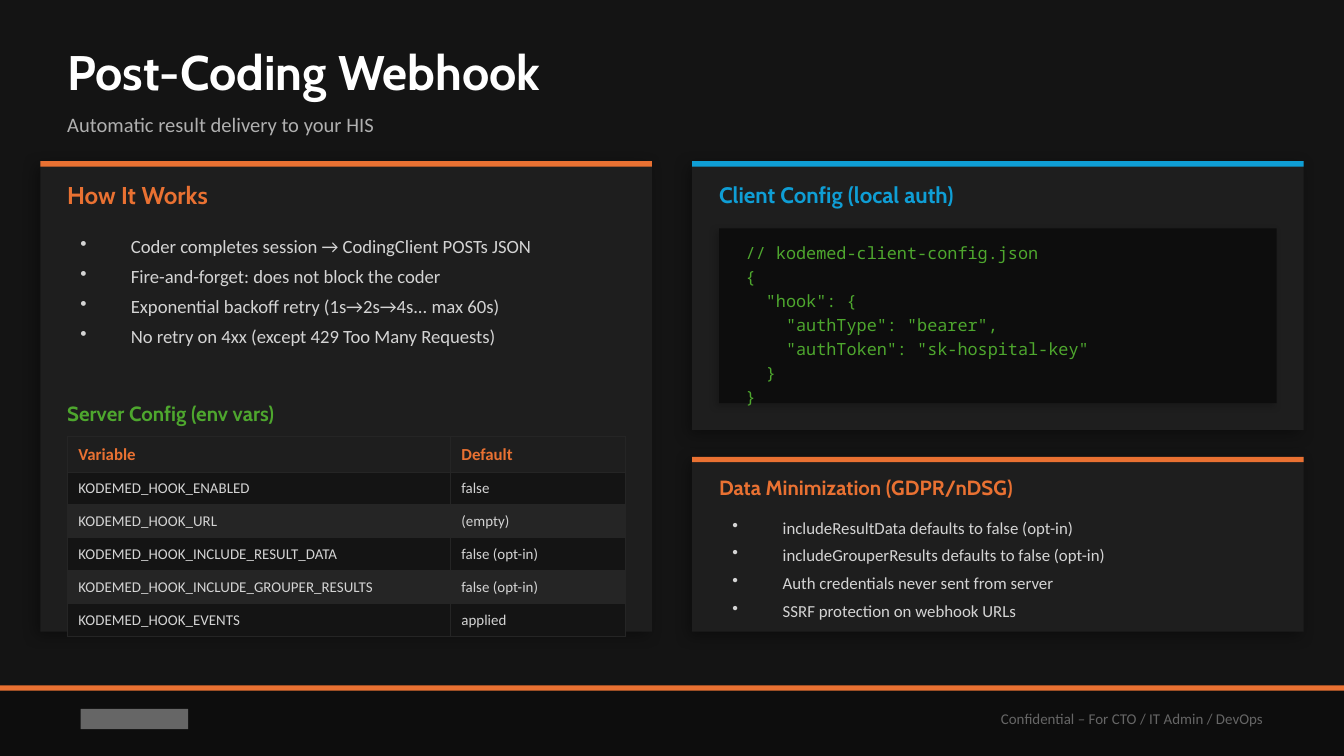
from dataclasses import dataclass

from lxml import etree
from pptx import Presentation
from pptx.dml.color import RGBColor
from pptx.enum.shapes import MSO_SHAPE
from pptx.enum.text import MSO_ANCHOR, PP_ALIGN
from pptx.oxml.ns import qn
from pptx.util import Inches, Pt

RECTANGLE = MSO_SHAPE.RECTANGLE
TOP, MIDDLE = MSO_ANCHOR.TOP, MSO_ANCHOR.MIDDLE
LEFT, RIGHT = PP_ALIGN.LEFT, PP_ALIGN.RIGHT

CELL = 0.05
COLUMNS, ROWS = 200, 112.5
LEFT_PANEL, RIGHT_PANEL, PANEL_COLUMNS = 6, 103, 91
PADDING = 4
INNER_COLUMNS = PANEL_COLUMNS - 2 * PADDING
BAR_ROWS = 0.8

HEADING, BODY, MONO = "Cabin", "Calibri", "Noto Sans Mono"
PAGE_COLOR, PANEL_COLOR, DEEP, STRIPE = "141414", "1E1E1E", "0D0D0D", "252525"
ORANGE, BLUE, GREEN = "E97132", "0F9ED5", "4EA72E"
WHITE, LIGHT, GRAY, DIM = "FFFFFF", "D4D4D4", "B0B0B0", "666666"


@dataclass(frozen=True)
class Area:
    column: float
    row: float
    columns: float
    rows: float

    def lengths(self) -> list[int]:
        return [grid(n) for n in (self.column, self.row, self.columns, self.rows)]


@dataclass(frozen=True)
class Style:
    size: float
    color: str
    font: str = BODY
    bold: bool = False


@dataclass(frozen=True)
class Shadow:
    opacity: int
    blur: float
    distance: float


@dataclass(frozen=True)
class Panel:
    column: float
    row: float
    rows: float
    accent: str
    title: str
    title_size: float
    title_rows: float


PANEL_SHADOW = Shadow(35, 8, 3)
CODE_SHADOW = Shadow(20, 4, 2)

PANELS = [
    Panel(LEFT_PANEL, 24, 70, ORANGE, "How It Works", 13, 6),
    Panel(RIGHT_PANEL, 24, 40, BLUE, "Client Config (local auth)", 12, 6),
    Panel(RIGHT_PANEL, 68, 26, ORANGE, "Data Minimization (GDPR/nDSG)", 11, 5),
]
STEPS = [
    "Coder completes session → CodingClient POSTs JSON",
    "Fire-and-forget: does not block the coder",
    "Exponential backoff retry (1s→2s→4s... max 60s)",
    "No retry on 4xx (except 429 Too Many Requests)",
]
SAFEGUARDS = [
    "includeResultData defaults to false (opt-in)",
    "includeGrouperResults defaults to false (opt-in)",
    "Auth credentials never sent from server",
    "SSRF protection on webhook URLs",
]
CODE = """// kodemed-client-config.json
{
  "hook": {
    "authType": "bearer",
    "authToken": "sk-hospital-key"
  }
}""".split("\n")
VARIABLES = [
    ("Variable", "Default"),
    ("KODEMED_HOOK_ENABLED", "false"),
    ("KODEMED_HOOK_URL", "(empty)"),
    ("KODEMED_HOOK_INCLUDE_RESULT_DATA", "false (opt-in)"),
    ("KODEMED_HOOK_INCLUDE_GROUPER_RESULTS", "false (opt-in)"),
    ("KODEMED_HOOK_EVENTS", "applied"),
]


def grid(cells: float) -> int:
    return Inches(cells * CELL)


def paint(target, color: str) -> None:
    target.solid()
    target.fore_color.rgb = RGBColor.from_string(color)


def add_color(parent, color: str):
    return etree.SubElement(parent, qn("a:srgbClr"), val=color)


def format_span(span, style: Style) -> None:
    span.font.size = Pt(style.size)
    span.font.name = style.font
    span.font.bold = style.bold
    span.font.color.rgb = RGBColor.from_string(style.color)


def add_block(page, area: Area, color: str, shadow: Shadow | None = None) -> None:
    block = page.shapes.add_shape(RECTANGLE, *area.lengths())
    paint(block.fill, color)
    block.line.fill.background()
    block.shadow.inherit = False
    if shadow:
        effects = block._element.spPr.find(qn("a:effectLst"))
        outer = etree.SubElement(
            effects, qn("a:outerShdw"), blurRad=str(Pt(shadow.blur)),
            dist=str(Pt(shadow.distance)), dir=str(135 * 60000),
            algn="bl", rotWithShape="0")
        tint = add_color(outer, "000000")
        etree.SubElement(tint, qn("a:alpha"), val=str(shadow.opacity * 1000))


def add_box(page, area: Area, anchor=MIDDLE, inset: bool = True):
    frame = page.shapes.add_textbox(*area.lengths()).text_frame
    frame.word_wrap = True
    frame.vertical_anchor = anchor
    if not inset:
        frame.margin_left = frame.margin_right = 0
        frame.margin_top = frame.margin_bottom = 0
    return frame


def add_label(page, area: Area, text: str, style: Style,
              align=LEFT, inset: bool = False) -> None:
    para = add_box(page, area, inset=inset).paragraphs[0]
    para.text = text
    para.alignment = align
    format_span(para.runs[0], style)


def add_lines(page, area: Area, lines: list[str], style: Style,
              gap: float, bullets: bool = False) -> None:
    frame = add_box(page, area, TOP)
    frame.text = "\n".join(lines)
    for para in frame.paragraphs:
        if bullets:
            properties = para._p.get_or_add_pPr()
            properties.set("marL", str(Pt(27)))
            properties.set("indent", str(-Pt(27)))
            etree.SubElement(properties, qn("a:buSzPct"), val="100000")
            etree.SubElement(properties, qn("a:buChar"), char="•")
        para.space_after = Pt(gap)
        format_span(para.runs[0], style)


def add_panel(page, panel: Panel) -> None:
    add_block(page, Area(panel.column, panel.row, PANEL_COLUMNS, panel.rows),
              PANEL_COLOR, PANEL_SHADOW)
    add_block(page, Area(panel.column, panel.row, PANEL_COLUMNS, BAR_ROWS), panel.accent)
    add_label(page, Area(panel.column + PADDING, panel.row + 2, INNER_COLUMNS, panel.title_rows),
              panel.title, Style(panel.title_size, panel.accent, HEADING, True))


def add_borders(cell) -> None:
    properties = cell._tc.get_or_add_tcPr()
    for side in ("lnL", "lnR", "lnT", "lnB"):
        line = etree.SubElement(properties, qn(f"a:{side}"), w=str(Pt(0.5)))
        add_color(etree.SubElement(line, qn("a:solidFill")), STRIPE)


def add_variables(page, area: Area, widths: tuple[float, float]) -> None:
    table = page.shapes.add_table(len(VARIABLES), len(widths), *area.lengths()).table
    table.horz_banding = False
    for column, width in zip(table.columns, widths):
        column.width = grid(width)
    for index, values in enumerate(VARIABLES):
        style = Style(8, LIGHT) if index else Style(9, ORANGE, bold=True)
        fill = (PAGE_COLOR if index % 2 else STRIPE) if index else PANEL_COLOR
        for cell, value in zip(table.rows[index].cells, values):
            cell.text = value
            cell.vertical_anchor = MIDDLE
            cell.margin_left = cell.margin_right = Pt(6)
            cell.margin_top = cell.margin_bottom = Pt(4)
            format_span(cell.text_frame.paragraphs[0].runs[0], style)
            add_borders(cell)
            paint(cell.fill, fill)


def add_footer(page) -> None:
    add_block(page, Area(0, 102, COLUMNS, ROWS - 102), DEEP)
    add_block(page, Area(0, 102, COLUMNS, BAR_ROWS), ORANGE)
    add_block(page, Area(12, 105.5, 16, 3), DIM)
    add_label(page, Area(110, 103, 80, 8), "Confidential – For CTO / IT Admin / DevOps",
              Style(8, DIM), RIGHT, inset=True)


def main() -> None:
    deck = Presentation()
    deck.slide_width, deck.slide_height = grid(COLUMNS), grid(ROWS)
    page = deck.slides.add_slide(deck.slide_layouts[6])
    paint(page.background.fill, PAGE_COLOR)
    add_footer(page)
    add_label(page, Area(10, 5, 180, 11), "Post-Coding Webhook", Style(26, WHITE, HEADING, True))
    add_label(page, Area(10, 15, 180, 7), "Automatic result delivery to your HIS", Style(11, GRAY))
    for panel in PANELS:
        add_panel(page, panel)

    left, right = LEFT_PANEL + PADDING, RIGHT_PANEL + PADDING
    add_lines(page, Area(left, 34, INNER_COLUMNS, 24), STEPS, Style(10, LIGHT), 4, bullets=True)
    add_label(page, Area(left, 59, INNER_COLUMNS, 5), "Server Config (env vars)",
              Style(11, GREEN, HEADING, True))
    add_variables(page, Area(left, 65, INNER_COLUMNS, 20), (57, 26))
    add_block(page, Area(right, 34, INNER_COLUMNS, 26), DEEP, CODE_SHADOW)
    add_lines(page, Area(right + 2, 35.2, INNER_COLUMNS - 4, 23.6), CODE, Style(9, GREEN, MONO), 2)
    add_lines(page, Area(right, 76, INNER_COLUMNS, 16), SAFEGUARDS, Style(9, LIGHT), 4, bullets=True)
    deck.save("out.pptx")


if __name__ == "__main__":
    main()
